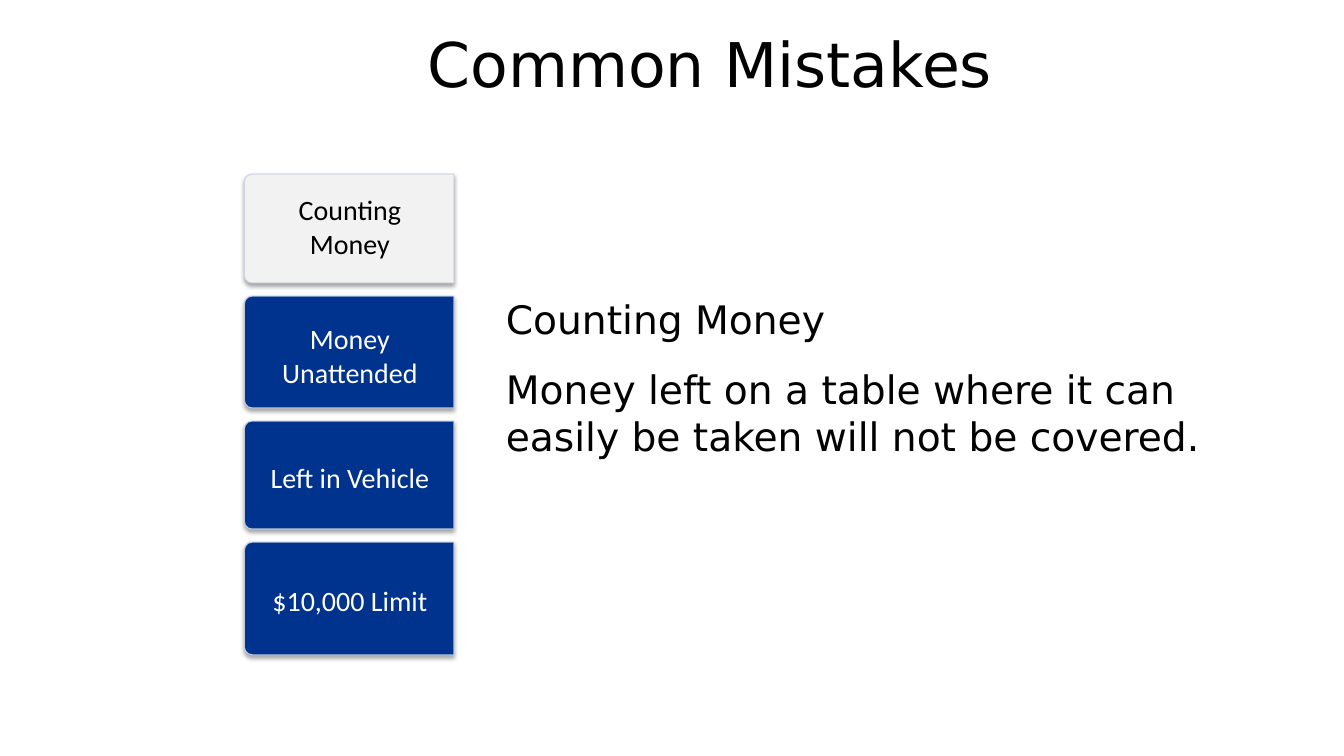
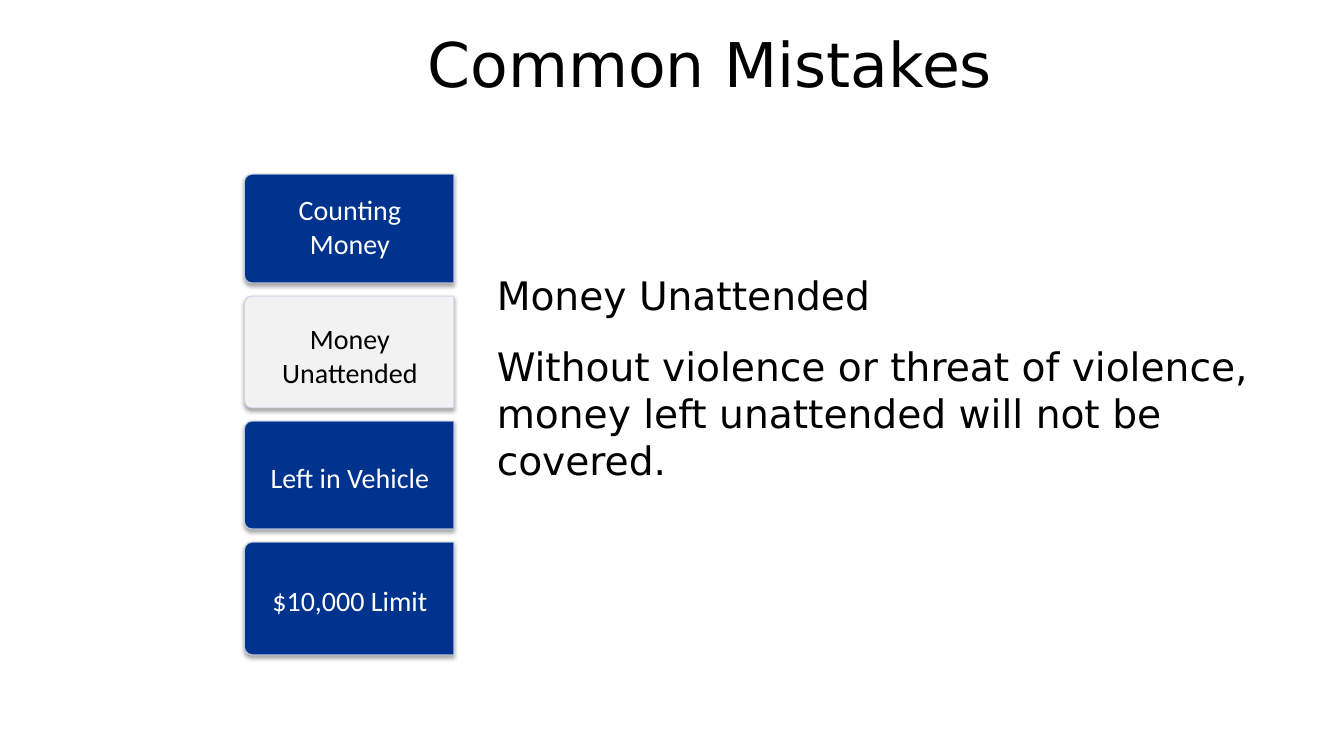
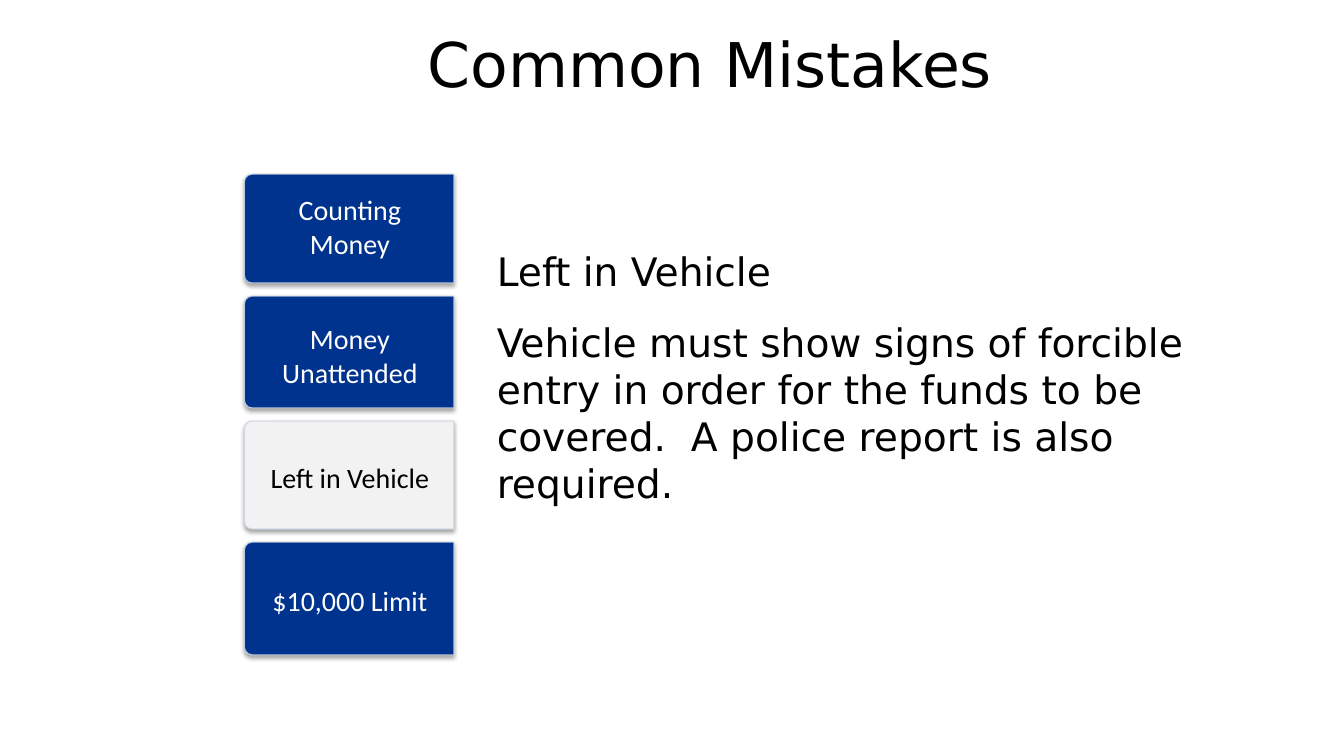
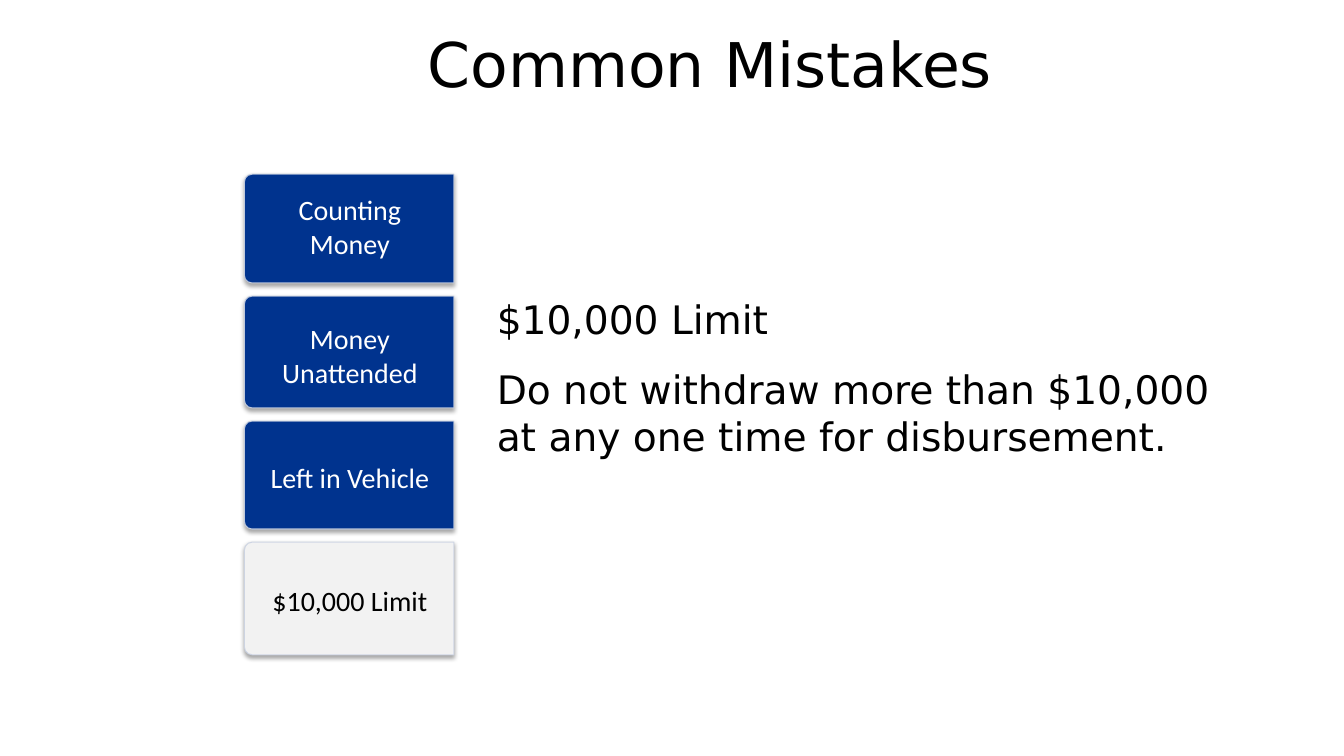
import pptx
import pptx.dml.color
import pptx.enum.shapes
import pptx.enum.text
import pptx.oxml.ns
import pptx.util
from lxml import etree

Cm = pptx.util.Cm
Pt = pptx.util.Pt
qn = pptx.oxml.ns.qn
ANCHOR = pptx.enum.text.MSO_ANCHOR
ALIGN = pptx.enum.text.PP_ALIGN

TABS = [
    ("Counting Money", 2.74, -0.06),
    ("Money Unattended", 2.82, 0.09),
    ("Left in Vehicle", 2.72, 0.05),
    ("$10,000 Limit", 2.84, 0.05),
]
DETAILS = [
    ("Money left on a table where it can easily be taken will not be covered.",
     12.5, 18.85, 4.45),
    ("Without violence or threat of violence, money left unattended will not be covered.",
     12.27, 19.69, 5.64),
    ("Vehicle must show signs of forcible entry in order for the funds to be covered.  "
     "A police report is also required.",
     12.27, 20.32, 6.83),
    ("Do not withdraw more than $10,000 at any one time for disbursement.",
     12.27, 19.48, 4.45),
]


def color(value):
    return pptx.dml.color.RGBColor.from_string(value)


def add_alpha(color_element, percent):
    etree.SubElement(color_element, qn("a:alpha"), val=str(percent * 1000))


class MistakesDeck:
    BLACK = "000000"
    WHITE = "FFFFFF"
    BLUE = "00338E"
    GREY = "F2F2F2"
    EDGE = "CBD3E3"
    HEADING_FONT = "DejaVu Sans"
    TAB_FONT = "Calibri"
    TAB_LEFT = 6.16
    TAB_TOP = 4.39
    TAB_WIDTH = 5.28
    TAB_GAP = 0.33
    LABEL_WIDTH = 4.5
    DETAIL_MIDDLE = 9.53

    def __init__(self):
        self.deck = pptx.Presentation()
        self.deck.slide_width = Cm(33.87)
        self.deck.slide_height = Cm(19.05)
        self.page = None

    def add_page(self):
        self.page = self.deck.slides.add_slide(self.deck.slide_layouts[6])

    def text(self, lines, left, top, width, height, font, size,
             ink=BLACK, align=ALIGN.LEFT, anchor=ANCHOR.TOP, gap=0):
        box = self.page.shapes.add_textbox(Cm(left), Cm(top), Cm(width), Cm(height))
        frame = box.text_frame
        frame.word_wrap = True
        frame.vertical_anchor = anchor
        for index, line in enumerate(lines):
            paragraph = frame.add_paragraph() if index else frame.paragraphs[0]
            paragraph.text = line
            paragraph.alignment = align
            paragraph.space_before = Pt(gap if index else 0)
            paragraph.font.name = font
            paragraph.font.size = Pt(size)
            paragraph.font.color.rgb = color(ink)
        return frame

    def title(self, words):
        self.text([words], 6.15, 0, 23.5, 3.18, self.HEADING_FONT, 44,
                  align=ALIGN.CENTER, anchor=ANCHOR.MIDDLE)

    def shadow(self, shape):
        shape.shadow.inherit = False
        effects = shape.element.spPr.find(qn("a:effectLst"))
        outer = etree.SubElement(
            effects, qn("a:outerShdw"), blurRad=str(Pt(3.1)), dist=str(Pt(1.8)),
            dir="5400000", algn="ctr", rotWithShape="0")
        add_alpha(etree.SubElement(outer, qn("a:srgbClr"), val=self.BLACK), 35)

    def tab(self, label, top, height, shift, active):
        middle_x = self.TAB_LEFT + self.TAB_WIDTH / 2
        middle_y = top + height / 2
        shape = self.page.shapes.add_shape(
            pptx.enum.shapes.MSO_SHAPE.ROUND_2_SAME_RECTANGLE,
            Cm(middle_x - height / 2), Cm(middle_y - self.TAB_WIDTH / 2),
            Cm(height), Cm(self.TAB_WIDTH))
        shape.rotation = 270
        shape.adjustments[0] = 0.07
        shape.adjustments[1] = 0
        shape.fill.solid()
        shape.fill.fore_color.rgb = color(self.GREY if active else self.BLUE)
        shape.line.width = Pt(0.75)
        shape.line.color.rgb = color(self.EDGE)
        add_alpha(shape.element.spPr.find(qn("a:ln")).find(".//" + qn("a:srgbClr")), 90)
        self.shadow(shape)
        frame = self.text([label], middle_x + 0.02 - self.LABEL_WIDTH / 2, top + shift,
                          self.LABEL_WIDTH, height, self.TAB_FONT, 20,
                          ink=self.BLACK if active else self.WHITE,
                          align=ALIGN.CENTER, anchor=ANCHOR.MIDDLE)
        frame.margin_left = frame.margin_right = 0

    def tabs(self, active_index):
        top = self.TAB_TOP
        for index, (label, height, shift) in enumerate(TABS):
            self.tab(label, top, height, shift, index == active_index)
            top += height + self.TAB_GAP

    def detail(self, heading, body, left, width, height):
        self.text([heading, body], left, self.DETAIL_MIDDLE - height / 2, width, height,
                  self.HEADING_FONT, 28, gap=17)

    def save(self):
        self.deck.save("out.pptx")


def main():
    mistakes = MistakesDeck()
    for index, (body, left, width, height) in enumerate(DETAILS):
        mistakes.add_page()
        mistakes.title("Common Mistakes")
        mistakes.tabs(index)
        mistakes.detail(TABS[index][0], body, left, width, height)
    mistakes.save()


if __name__ == "__main__":
    main()
